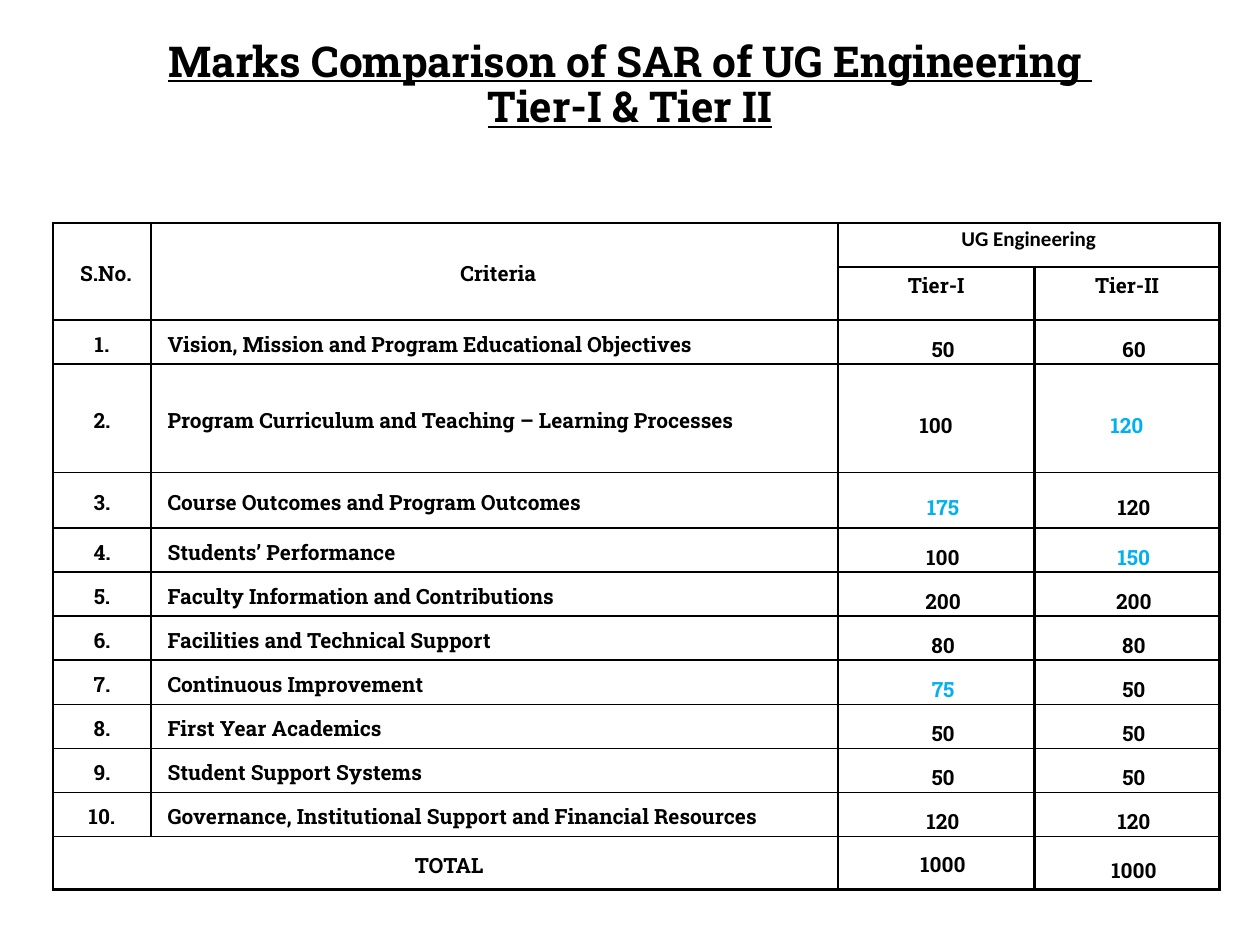
"""Build a slide comparing accreditation marks for Tier-I and Tier-II."""
import dataclasses

import lxml.etree
import pptx
import pptx.dml.color
import pptx.enum.text
import pptx.oxml.ns
import pptx.util

Inches = pptx.util.Inches
Pt = pptx.util.Pt
Align = pptx.enum.text.PP_ALIGN
Anchor = pptx.enum.text.MSO_ANCHOR
BLACK = pptx.dml.color.RGBColor(0x00, 0x00, 0x00)
BLUE = pptx.dml.color.RGBColor(0x00, 0xB0, 0xF0)
SLAB = "Roboto Slab"


@dataclasses.dataclass(frozen=True)
class CellStyle:
    indent: float = 0
    first_line: float = 0
    line_spacing: float = 1.15
    before: float = 0
    after: float = 0
    align: Align = Align.CENTER
    anchor: Anchor = Anchor.MIDDLE
    font: str = SLAB


@dataclasses.dataclass(frozen=True)
class Criterion:
    name: str
    tier_one: int
    tier_two: int
    height: float = 0.35
    highlight: int | None = None


HEADING = CellStyle(indent=0.06, before=3, after=3)
TIER = CellStyle(anchor=Anchor.TOP)
GROUP = dataclasses.replace(TIER, font="Calibri")
NUMBER = CellStyle(indent=0.38, first_line=-0.38, before=3, after=3)
NAME = dataclasses.replace(HEADING, align=Align.LEFT)
MARK = CellStyle(indent=0.11, line_spacing=1.5)
TOTAL_MARK = dataclasses.replace(MARK, before=6)

CRITERIA = [
    Criterion("Vision, Mission and Program Educational Objectives", 50, 60),
    Criterion("Program Curriculum and Teaching – Learning Processes", 100, 120, 0.86, 3),
    Criterion("Course Outcomes and Program Outcomes", 175, 120, 0.44, 2),
    Criterion("Students’ Performance", 100, 150, highlight=3),
    Criterion("Faculty Information and Contributions", 200, 200),
    Criterion("Facilities and Technical Support", 80, 80),
    Criterion("Continuous Improvement", 75, 50, highlight=2),
    Criterion("First Year Academics", 50, 50),
    Criterion("Student Support Systems", 50, 50),
    Criterion("Governance, Institutional Support and Financial Resources", 120, 120),
]
COLUMN_WIDTHS = [0.78, 5.45, 1.56, 1.47]
ROW_HEIGHTS = [0.35, 0.42, *(criterion.height for criterion in CRITERIA), 0.42]


def add_title(slide: pptx.slide.Slide) -> None:
    title = slide.shapes.add_textbox(Inches(0.5), Inches(0.3), Inches(9), Inches(1.25))
    frame = title.text_frame
    frame.word_wrap = True
    frame.margin_top = Inches(0.02)
    frame.text = "Marks Comparison of SAR of UG Engineering \vTier-I & Tier II"
    paragraph = frame.paragraphs[0]
    paragraph.alignment = Align.CENTER
    paragraph.line_spacing = 0.9
    font = paragraph.font
    font.name, font.size, font.color.rgb = SLAB, Pt(24.3), BLACK
    font.bold = font.underline = True


def set_borders(cell: pptx.table._Cell, widths: dict[str, float]) -> None:
    properties = cell._tc.get_or_add_tcPr()
    for side, width in widths.items():
        line = lxml.etree.SubElement(
            properties, pptx.oxml.ns.qn(f"a:ln{side}"), w=str(Pt(width)))
        fill = lxml.etree.SubElement(line, pptx.oxml.ns.qn("a:solidFill"))
        lxml.etree.SubElement(fill, pptx.oxml.ns.qn("a:srgbClr"), val=str(BLACK))


def write_cell(cell: pptx.table._Cell, text: str, style: CellStyle,
               color: pptx.dml.color.RGBColor = BLACK) -> None:
    cell.text = text
    cell.vertical_anchor = style.anchor
    paragraph = cell.text_frame.paragraphs[0]
    paragraph.alignment = style.align
    paragraph.line_spacing = style.line_spacing
    paragraph.space_before = Pt(style.before)
    paragraph.space_after = Pt(style.after)
    properties = paragraph._p.get_or_add_pPr()
    properties.set("marL", str(Inches(style.indent)))
    properties.set("indent", str(Inches(style.first_line)))
    font = paragraph.font
    font.name, font.size, font.bold, font.color.rgb = style.font, Pt(12), True, color


def add_marks_table(slide: pptx.slide.Slide) -> pptx.table.Table:
    table = slide.shapes.add_table(
        len(ROW_HEIGHTS), len(COLUMN_WIDTHS), Inches(0.42), Inches(1.77),
        Inches(sum(COLUMN_WIDTHS)), Inches(sum(ROW_HEIGHTS))).table
    table.first_row = table.horz_banding = False
    for column, width in zip(table.columns, COLUMN_WIDTHS):
        column.width = Inches(width)
    last_row = len(ROW_HEIGHTS) - 1
    for row_index, height in enumerate(ROW_HEIGHTS):
        table.rows[row_index].height = Inches(height)
        for column_index in range(len(COLUMN_WIDTHS)):
            cell = table.cell(row_index, column_index)
            cell.margin_left = cell.margin_right = Inches(0.07)
            cell.margin_top = cell.margin_bottom = 0
            is_tier = column_index > 1
            top = 1.5 if row_index == 0 or (is_tier and row_index < 3) else 1
            bottom = 1.5 if row_index == last_row or (is_tier and row_index < 2) else 1
            set_borders(cell, {"L": 1.5, "R": 1.5, "T": top, "B": bottom})
            cell.fill.background()
    return table


def fill_header(table: pptx.table.Table) -> None:
    for column, text in enumerate(["S.No.", "Criteria"]):
        table.cell(0, column).merge(table.cell(1, column))
        write_cell(table.cell(0, column), text, HEADING)
    table.cell(0, 2).merge(table.cell(0, 3))
    write_cell(table.cell(0, 2), "UG Engineering", GROUP)
    for column, text in enumerate(["Tier-I", "Tier-II"], start=2):
        write_cell(table.cell(1, column), text, TIER)


def fill_criteria(table: pptx.table.Table) -> None:
    for number, criterion in enumerate(CRITERIA, start=1):
        row = number + 1
        is_tall = criterion.height > 0.5
        name_style = dataclasses.replace(NAME, before=0, after=0) if is_tall else NAME
        mark_style = dataclasses.replace(MARK, indent=0) if is_tall else MARK
        write_cell(table.cell(row, 0), f"{number}.", NUMBER)
        write_cell(table.cell(row, 1), criterion.name, name_style)
        for column, mark in enumerate([criterion.tier_one, criterion.tier_two], start=2):
            color = BLUE if column == criterion.highlight else BLACK
            write_cell(table.cell(row, column), str(mark), mark_style, color)


def fill_total(table: pptx.table.Table) -> None:
    row = len(ROW_HEIGHTS) - 1
    table.cell(row, 0).merge(table.cell(row, 1))
    write_cell(table.cell(row, 0), "TOTAL", HEADING)
    for column, anchor in [(2, Anchor.TOP), (3, Anchor.MIDDLE)]:
        total = sum([criterion.tier_one, criterion.tier_two][column - 2]
                    for criterion in CRITERIA)
        write_cell(table.cell(row, column), str(total),
                   dataclasses.replace(TOTAL_MARK, anchor=anchor))


def main() -> None:
    presentation = pptx.Presentation()
    presentation.slide_width, presentation.slide_height = Inches(10), Inches(7.5)
    slide = presentation.slides.add_slide(presentation.slide_layouts[6])
    add_title(slide)
    table = add_marks_table(slide)
    fill_header(table)
    fill_criteria(table)
    fill_total(table)
    presentation.save("out.pptx")


if __name__ == "__main__":
    main()
